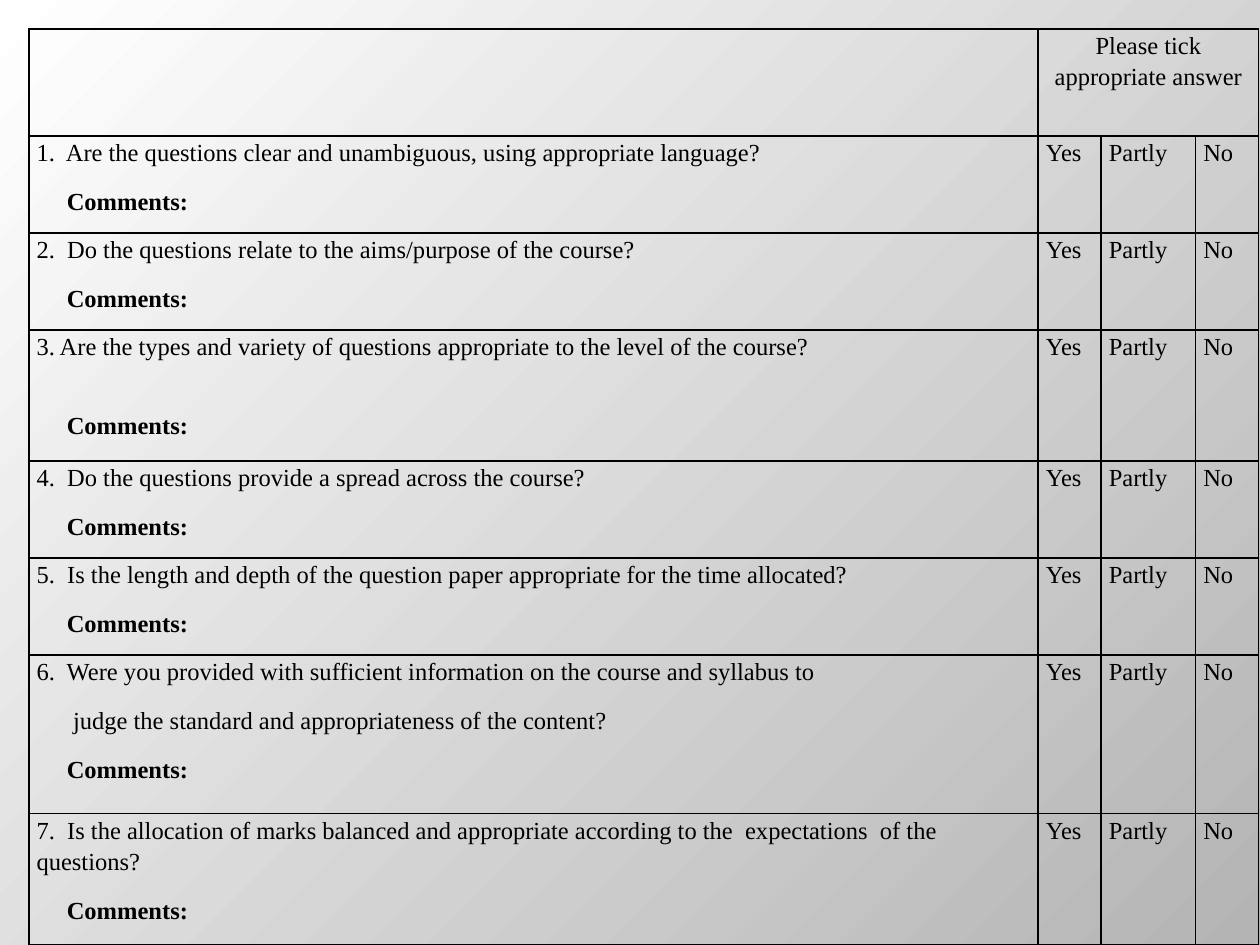
from lxml.etree import SubElement
from pptx import Presentation
from pptx.dml.color import RGBColor
from pptx.enum.text import PP_ALIGN
from pptx.oxml.ns import qn
from pptx.util import Inches, Pt

COLUMNS = [8.01, 0.5, 0.75, 0.5]
ANSWERS = ["Yes", "Partly", "No"]
HEADER_HEIGHT = 0.85
COMMENT = ("Comments:", {"bold": True, "indent": 0.24})
QUESTIONS = [
    (0.77, [("1.  Are the questions clear and unambiguous, using appropriate language?", {})]),
    (0.77, [("2.  Do the questions relate to the aims/purpose of the course?", {})]),
    (1.04, [("3. Are the types and variety of questions appropriate to the level of the course?",
             {"after": 27.4})]),
    (0.77, [("4.  Do the questions provide a spread across the course?", {})]),
    (0.77, [("5.  Is the length and depth of the question paper appropriate for the time allocated?", {})]),
    (1.26, [("6.  Were you provided with sufficient information on the course and syllabus to", {}),
            ("judge the standard and appropriateness of the content?", {"indent": 0.29})]),
    (1.04, [("7.  Is the allocation of marks balanced and appropriate according to the"
             "  expectations  of the questions?", {})]),
]


def color(value):
    return RGBColor.from_string(value)


class Form:
    """Holds the form's style and current slide, and draws its elements."""

    font, size, ink = "Times New Roman", 14, "000000"

    def __init__(self, s):
        self.s = s

    def background(self, start, end):
        fill = self.s.background.fill
        fill.gradient()
        for stop, value, position in zip(fill.gradient_stops, (start, end), (0, 1)):
            stop.color.rgb = color(value)
            stop.position = position
        grad = self.s.element.find(".//" + qn("a:gradFill"))
        grad.remove(grad.find(qn("a:lin")))
        shade = SubElement(grad, qn("a:path"), {"path": "circle"})
        SubElement(shade, qn("a:fillToRect"), {"r": "100000", "b": "100000"})

    def table(self, left, top, widths, heights):
        tbl = self.s.shapes.add_table(
            len(heights), len(widths), Inches(left), Inches(top),
            Inches(sum(widths)), Inches(sum(heights))).table
        tbl.first_row = tbl.horz_banding = False
        for column, width in zip(tbl.columns, widths):
            column.width = Inches(width)
        for row, height in zip(tbl.rows, heights):
            row.height = Inches(height)
        for cell in tbl.iter_cells():
            self.cell_style(cell)
        return tbl

    def cell_style(self, cell):
        cell.margin_left = cell.margin_right = Inches(0.06)
        cell.margin_top = cell.margin_bottom = 0
        tc_pr = cell._tc.get_or_add_tcPr()
        for side in ("lnL", "lnR", "lnT", "lnB"):
            ln = SubElement(tc_pr, qn("a:" + side), {"w": str(Pt(1))})
            fill = SubElement(ln, qn("a:solidFill"))
            SubElement(fill, qn("a:srgbClr"), {"val": self.ink})
        cell.fill.background()

    def text(self, cell, lines, align=PP_ALIGN.LEFT):
        tf = cell.text_frame
        for i, (words, options) in enumerate(lines):
            p = tf.add_paragraph() if i else tf.paragraphs[0]
            p.text = words
            p.alignment = align
            p.line_spacing = 1.15
            p.space_after = Pt(options.get("after", 10))
            if "indent" in options:
                p._p.get_or_add_pPr().set("marL", str(Inches(options["indent"])))
            p.font.name = self.font
            p.font.size = Pt(self.size)
            p.font.bold = options.get("bold", False)
            p.font.color.rgb = color(self.ink)


def main():
    prs = Presentation()
    prs.slide_width, prs.slide_height = Inches(10), Inches(7.5)
    form = Form(prs.slides.add_slide(prs.slide_layouts[6]))
    form.background("FFFFFF", "B4B4B4")

    heights = [HEADER_HEIGHT] + [height for height, _ in QUESTIONS]
    tbl = form.table(0.23, 0.23, COLUMNS, heights)
    tbl.cell(0, 1).merge(tbl.cell(0, 3))
    form.text(tbl.cell(0, 1), [("Please tick appropriate answer", {})], PP_ALIGN.CENTER)
    for row, (_, lines) in enumerate(QUESTIONS, 1):
        form.text(tbl.cell(row, 0), lines + [COMMENT])
        for column, answer in enumerate(ANSWERS, 1):
            form.text(tbl.cell(row, column), [(answer, {})])

    prs.save("out.pptx")


if __name__ == "__main__":
    main()
